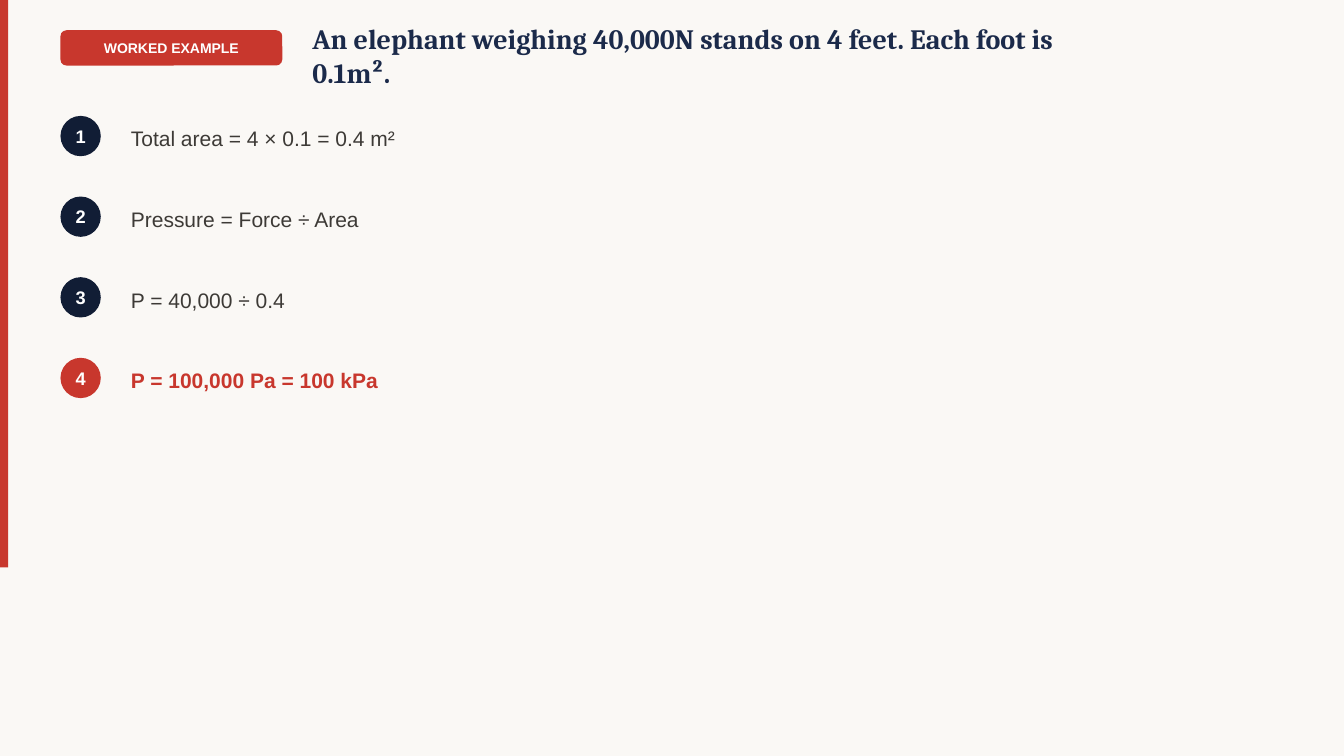
from pptx import Presentation
from pptx.dml.color import RGBColor
from pptx.enum.shapes import MSO_SHAPE
from pptx.enum.text import MSO_ANCHOR, PP_ALIGN
from pptx.util import Inches, Pt

RED = RGBColor(0xC8, 0x37, 0x2D)
NAVY = RGBColor(0x1B, 0x2A, 0x4A)
DARK_NAVY = RGBColor(0x11, 0x1D, 0x35)
CHARCOAL = RGBColor(0x3D, 0x3A, 0x36)
CREAM = RGBColor(0xFA, 0xF8, 0xF5)
WHITE = RGBColor(0xFF, 0xFF, 0xFF)

presentation = Presentation()
presentation.slide_width = Inches(13.33)
presentation.slide_height = Inches(7.5)
slide = presentation.slides.add_slide(presentation.slide_layouts[6])
slide.background.fill.solid()
slide.background.fill.fore_color.rgb = CREAM


def add_filled_shape(kind, left, top, width, height, color):
    shape = slide.shapes.add_shape(
        kind, Inches(left), Inches(top), Inches(width), Inches(height))
    shape.shadow.inherit = False
    shape.fill.solid()
    shape.fill.fore_color.rgb = color
    shape.line.fill.background()
    frame = shape.text_frame
    frame.margin_left = frame.margin_right = 0
    frame.margin_top = frame.margin_bottom = 0
    return shape


def write_text(shape, text, size, color, bold=True, font="Arial", align=PP_ALIGN.LEFT):
    frame = shape.text_frame
    frame.word_wrap = True
    frame.vertical_anchor = MSO_ANCHOR.MIDDLE
    paragraph = frame.paragraphs[0]
    paragraph.text = text
    paragraph.alignment = align
    paragraph.font.name = font
    paragraph.font.size = Pt(size)
    paragraph.font.bold = bold
    paragraph.font.color.rgb = color


# Accent bar on the left edge
add_filled_shape(MSO_SHAPE.RECTANGLE, 0, 0, 0.08, 5.63, RED)

# Label and question
label = add_filled_shape(MSO_SHAPE.ROUNDED_RECTANGLE, 0.6, 0.3, 2.2, 0.35, RED)
label.adjustments[0] = 0.17
write_text(label, "WORKED EXAMPLE", 10, WHITE, align=PP_ALIGN.CENTER)

question = slide.shapes.add_textbox(Inches(3), Inches(0.3), Inches(8), Inches(0.5))
write_text(question, "An elephant weighing 40,000N stands on 4 feet. Each foot is 0.1m².",
           20, NAVY, font="Cambria")

# Numbered steps, with the answer last in red
steps = [
    "Total area = 4 × 0.1 = 0.4 m²",
    "Pressure = Force ÷ Area",
    "P = 40,000 ÷ 0.4",
    "P = 100,000 Pa = 100 kPa",
]
for index, step in enumerate(steps):
    top = 1.1 + 0.8 * index
    is_answer = index == len(steps) - 1

    badge = add_filled_shape(MSO_SHAPE.OVAL, 0.6, top + 0.05, 0.4, 0.4,
                             RED if is_answer else DARK_NAVY)
    write_text(badge, str(index + 1), 13, WHITE, align=PP_ALIGN.CENTER)

    step_box = slide.shapes.add_textbox(Inches(1.2), Inches(top), Inches(10.5), Inches(0.55))
    write_text(step_box, step, 15, RED if is_answer else CHARCOAL, bold=is_answer)

presentation.save("out.pptx")
